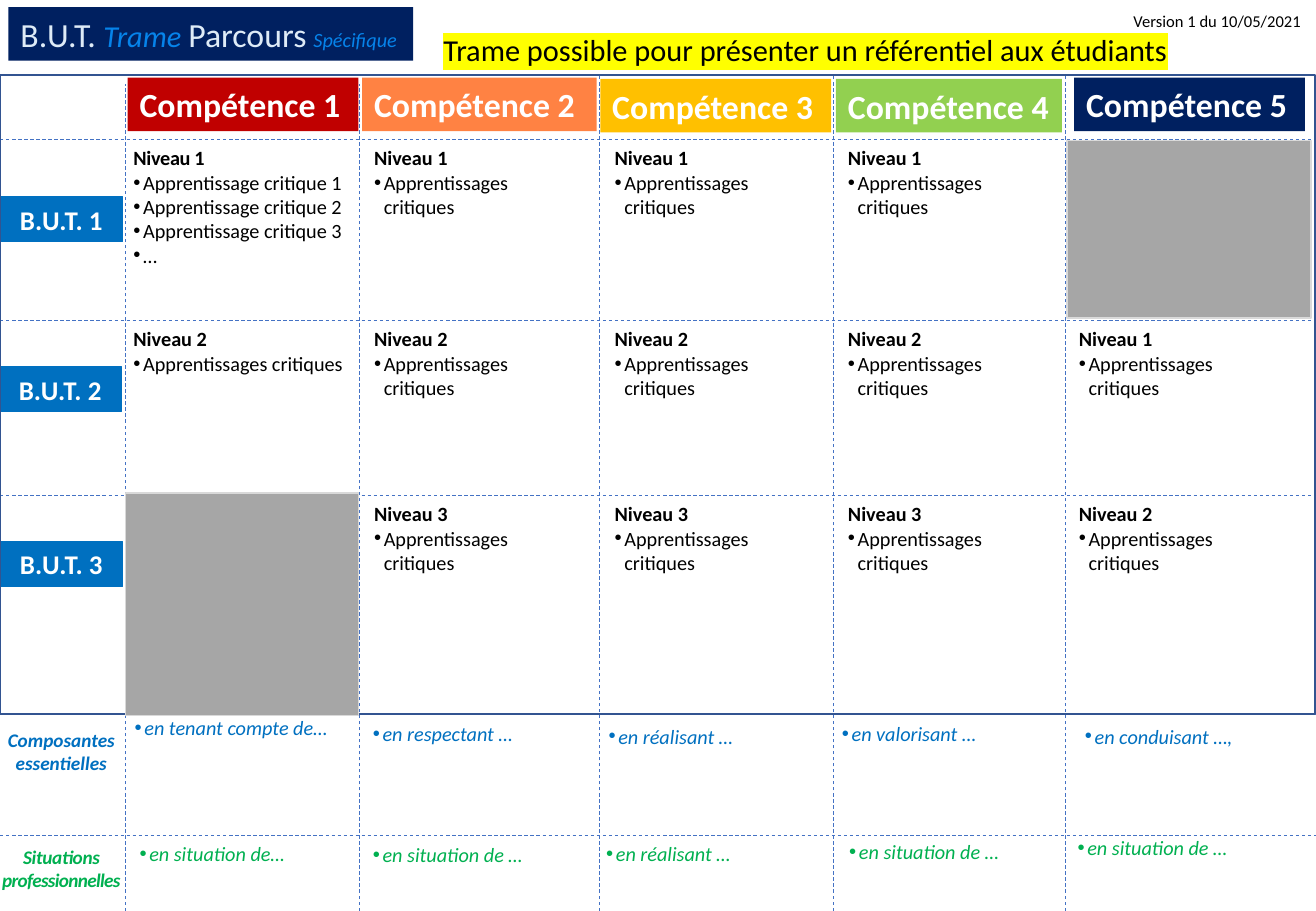
import pptx
import pptx.util
import pptx.dml.color
import pptx.enum.dml
import pptx.enum.shapes
import pptx.enum.text
import pptx.oxml
import pptx.oxml.ns

Inches, Pt = pptx.util.Inches, pptx.util.Pt
ALIGN = pptx.enum.text.PP_ALIGN
WIDE, HIGH = 10.83, 7.5
FONT = "Calibri"
HUES = {
    "black": "000000", "white": "FFFFFF", "blue": "0070C0", "green": "00B050",
    "grid": "4472C4", "frame": "325491", "navy": "002060", "pale": "DEEBF7",
    "sky": "0683EA", "red": "C00000", "orange": "FF8243", "gold": "FFC000",
    "lime": "92D050", "grey": "A6A6A6", "edge": "D9D9D9", "yellow": "FFFF00",
}

TITLE = [
    ("B.U.T. ", 20, "pale", ""), ("Trame ", 18, "sky", "i"),
    ("Parcours", 20, "pale", ""), (" ", 18, "black", ""),
    ("Spécifique", 12, "sky", "i"),
]
SKILLS = [
    (1.05, 0.64, 1.9, "red"), (2.98, 0.64, 1.93, "orange"),
    (4.94, 0.65, 1.9, "gold"), (6.88, 0.65, 1.86, "lime"),
    (8.84, 0.64, 1.9, "navy"),
]
YEARS = [(0, 1.62), (-0.01, 3.02), (0, 4.46)]
COLS = [1, 2.98, 4.96, 6.88, 8.78]
ROWS = [1.15, 2.64, 4.08]
LEVELS = [[1, 1, 1, 1, None], [2, 2, 2, 2, 1], [None, 3, 3, 3, 2]]
WIDTHS = {(0, 0): 2.02, (0, 1): 1.92, (1, 0): 1.97}
FIRST = [f"Apprentissage critique {n}" for n in (1, 2, 3)] + ["…"]
OTHER = ["Apprentissages critiques"]
PARTS = [
    ("en tenant compte de…", 1.01, 5.86, 1.95, 0.9, "blue"),
    ("en respectant …", 2.97, 5.91, 1.95, 0.9, "blue"),
    ("en réalisant …", 4.91, 5.91, 1.95, 1, "blue"),
    ("en valorisant …", 6.83, 5.89, 1.98, 1, "blue"),
    ("en conduisant …,", 8.83, 5.91, 1.95, 1, "blue"),
    ("en situation de…", 1.05, 6.9, 1.95, 0.9, "green"),
    ("en situation de …", 2.97, 6.91, 1.95, 0.9, "green"),
    ("en réalisant …", 4.89, 6.9, 2, 0.9, "green"),
    ("en situation de …", 6.89, 6.88, 1.95, 0.9, "green"),
    ("en situation de …", 8.77, 6.85, 2.06, 0.9, "green"),
]
SIDES = [
    (5.95, "blue", [("Composantes essentielles", 0)]),
    (6.91, "green", [("Situations ", -20), ("professionnelles", -40)]),
]
ACROSS = ROWS + [5.88, 6.88]
DOWN = [(1.03, 0.69), (2.96, 0.69), (4.93, 0.62), (6.86, 0.62), (8.77, 0.62)]
BLANKS = [(1.03, 4.06, 1.92, 1.83), (8.78, 1.16, 2.01, 1.46)]

deck = pptx.Presentation()
deck.slide_width, deck.slide_height = Inches(WIDE), Inches(HIGH)
slide = deck.slides.add_slide(deck.slide_layouts[6])


def rgb(name):
    return pptx.dml.color.RGBColor.from_string(HUES[name])


def node(tag, attrs=""):
    space = pptx.oxml.ns.nsdecls("a")
    return pptx.oxml.parse_xml(f"<a:{tag} {space} {attrs}/>")


def add_run(para, text, size, hue, style="", gap=0):
    run = para.add_run()
    run.text = text
    font = run.font
    font.name, font.size = FONT, Pt(size)
    font.bold, font.italic = "b" in style, "i" in style
    font.color.rgb = rgb(hue)
    if gap:
        run._r.get_or_add_rPr().set("spc", str(gap))
    return run


def bullet(para):
    props = para._p.get_or_add_pPr()
    props.set("marL", str(Inches(0.08)))
    props.set("indent", str(Inches(-0.08)))
    props.append(node("buFont", 'typeface="Arial"'))
    props.append(node("buChar", 'char="•"'))


def add_text(x, y, w, h, wrap=True):
    frame = slide.shapes.add_textbox(*map(Inches, (x, y, w, h))).text_frame
    frame.word_wrap = wrap
    return frame


def add_rect(x, y, w, h, fill=None, line=None, weight=0.75):
    kind = pptx.enum.shapes.MSO_SHAPE.RECTANGLE
    rect = slide.shapes.add_shape(kind, *map(Inches, (x, y, w, h)))
    rect.shadow.inherit = False
    if fill:
        rect.fill.solid()
        rect.fill.fore_color.rgb = rgb(fill)
    else:
        rect.fill.background()
    if line:
        rect.line.color.rgb = rgb(line)
        rect.line.width = Pt(weight)
    else:
        rect.line.fill.background()
    return rect


def add_label(rect, runs, align=ALIGN.LEFT, wrap=True):
    frame = rect.text_frame
    frame.word_wrap = wrap
    para = frame.paragraphs[0]
    para.alignment = align
    for run in runs:
        add_run(para, *run)


def add_dash(x1, y1, x2, y2):
    kind = pptx.enum.shapes.MSO_CONNECTOR.STRAIGHT
    line = slide.shapes.add_connector(kind, *map(Inches, (x1, y1, x2, y2)))
    line.line.color.rgb = rgb("grid")
    line.line.width = Pt(0.5)
    line.line.dash_style = pptx.enum.dml.MSO_LINE.DASH
    line._element.spPr.append(node("effectLst"))


for y in ACROSS:
    add_dash(0, y, WIDE, y)
for x, top in DOWN:
    add_dash(x, HIGH, x, top)

for r, (y, line) in enumerate(zip(ROWS, LEVELS)):
    for c, (x, level) in enumerate(zip(COLS, line)):
        if level is None:
            continue
        items = FIRST if (r, c) == (0, 0) else OTHER
        high = 1.11 if items is FIRST else 0.71
        frame = add_text(x, y, WIDTHS.get((r, c), 1.89), high)
        gap = -20 if items is FIRST else 0
        add_run(frame.paragraphs[0], f"Niveau {level}", 12, "black", "b", gap)
        for item in items:
            para = frame.add_paragraph()
            bullet(para)
            add_run(para, item, 12, "black")

for n, (x, y) in enumerate(YEARS, 1):
    badge = add_rect(x, y, 1.01, 0.37, "blue", "blue")
    add_label(badge, [(f"B.U.T. {n}", 16, "white", "b")], ALIGN.CENTER)

for y, hue, words in SIDES:
    para = add_text(-0.16, y, 1.33, 0.48).paragraphs[0]
    para.alignment = ALIGN.CENTER
    for word, gap in words:
        add_run(para, word, 11.4, hue, "bi", gap)

for text, x, y, w, space, hue in PARTS:
    para = add_text(x, y, w, 0.28).paragraphs[0]
    para.line_spacing = space
    bullet(para)
    add_run(para, text, 12, hue, "i")

add_rect(0, 0.62, 10.82, 5.26, line="frame", weight=1.25)
add_label(add_rect(0.07, 0.06, 3.33, 0.44, "navy"), TITLE, wrap=False)
for n, (x, y, w, hue) in enumerate(SKILLS, 1):
    head = add_rect(x, y, w, 0.44, hue)
    add_label(head, [(f"Compétence {n}", 20, "white", "b")])
for box in BLANKS:
    add_rect(*box, "grey", "edge")

date = add_text(9.23, 0.04, 1.6, 0.27, False).paragraphs[0]
add_run(date, "Version 1 du 10/05/2021", 9.8, "black")

note = add_text(3.55, 0.21, 6.18, 0.4, False).paragraphs[0]
words = "Trame possible pour présenter un référentiel aux étudiants"
props = add_run(note, words, 18, "black")._r.get_or_add_rPr()
mark = node("highlight")
mark.append(node("srgbClr", f'val="{HUES["yellow"]}"'))
props.find(pptx.oxml.ns.qn("a:solidFill")).addnext(mark)

deck.save("out.pptx")
